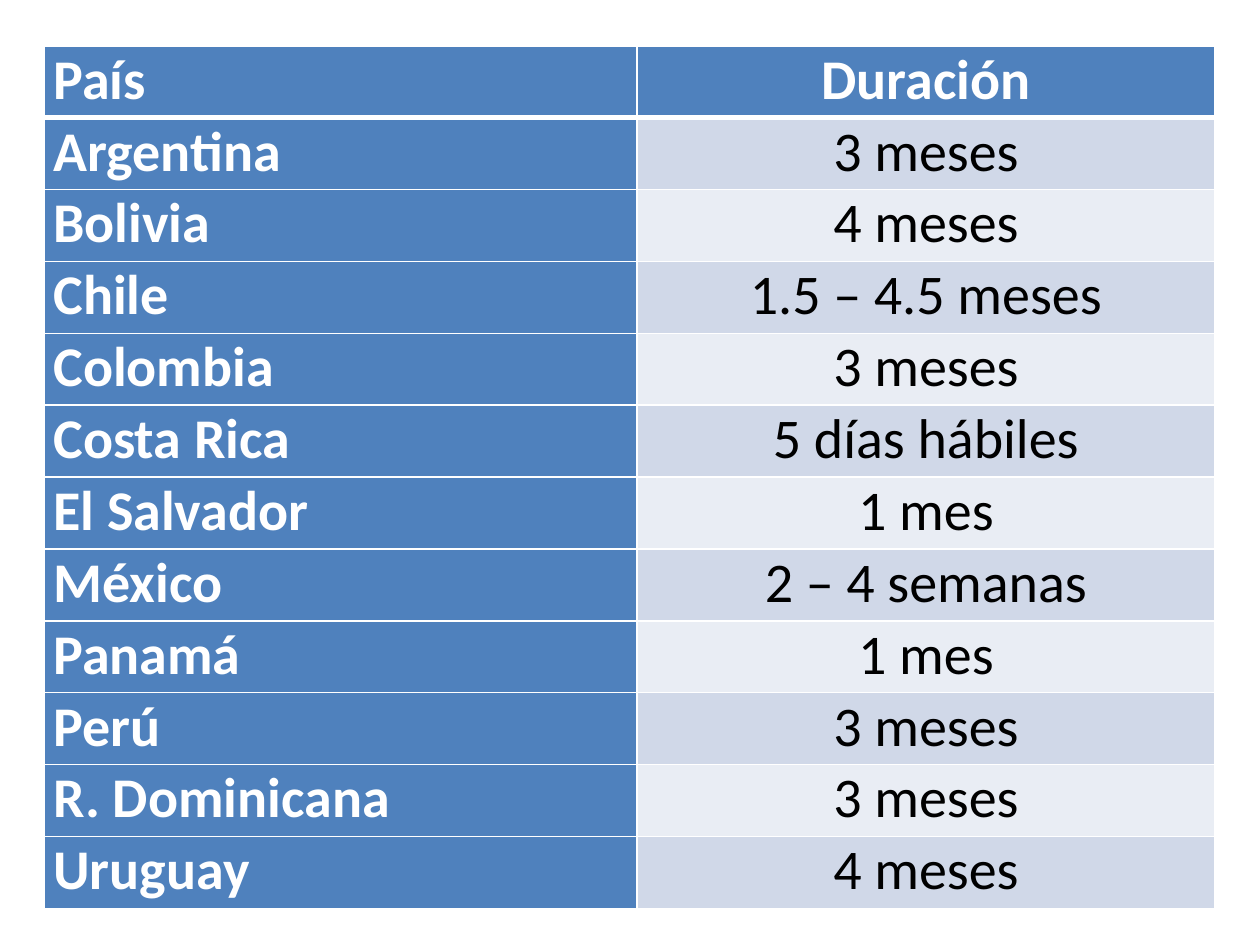
import pptx
import pptx.dml.color
import pptx.enum.text
import pptx.oxml
import pptx.oxml.ns
import pptx.util

Pt = pptx.util.Pt
ALIGN = pptx.enum.text.PP_ALIGN

DURATIONS = [
    ("País", "Duración"),
    ("Argentina", "3 meses"),
    ("Bolivia", "4 meses"),
    ("Chile", "1.5 – 4.5 meses"),
    ("Colombia", "3 meses"),
    ("Costa Rica", "5 días hábiles"),
    ("El Salvador", "1 mes"),
    ("México", "2 – 4 semanas"),
    ("Panamá", "1 mes"),
    ("Perú", "3 meses"),
    ("R. Dominicana", "3 meses"),
    ("Uruguay", "4 meses"),
]


def color(hex_value):
    return pptx.dml.color.RGBColor.from_string(hex_value)


class DurationSlide:
    """Holds the table style and the current slide."""

    font, size = "Calibri", 32
    white, black, blue = "FFFFFF", "000000", "4F81BD"
    bands = ("E9EDF4", "D0D8E8")

    def __init__(self, deck):
        self.slide = deck.slides.add_slide(deck.slide_layouts[6])

    def border(self, cell, widths):
        properties = cell._tc.get_or_add_tcPr()
        for position, (side, width) in enumerate(widths.items()):
            line = pptx.oxml.parse_xml(
                f'<a:ln{side} {pptx.oxml.ns.nsdecls("a")} w="{Pt(width)}">'
                f'<a:solidFill><a:srgbClr val="{self.white}"/></a:solidFill>'
                f'</a:ln{side}>'
            )
            properties.insert(position, line)

    def cell(self, cell, text, fill, ink, bold, align):
        cell.margin_left = cell.margin_right = Pt(5)
        cell.margin_top = cell.margin_bottom = 0
        cell.fill.solid()
        cell.fill.fore_color.rgb = color(fill)
        paragraph = cell.text_frame.paragraphs[0]
        paragraph.alignment = align
        run = paragraph.add_run()
        run.text = text
        run.font.name = self.font
        run.font.size = Pt(self.size)
        run.font.bold = bold
        run.font.color.rgb = color(ink)

    def table(self, rows, left, top, column_widths, row_height):
        table = self.slide.shapes.add_table(
            len(rows), len(column_widths), Pt(left), Pt(top),
            Pt(sum(column_widths)), Pt(row_height * len(rows)),
        ).table
        for column, width in zip(table.columns, column_widths):
            column.width = Pt(width)
        for index, texts in enumerate(rows):
            table.rows[index].height = Pt(row_height)
            widths = {"L": 1, "R": 1, "T": 3 if index == 1 else 1, "B": 3 if index == 0 else 1}
            for position, text in enumerate(texts):
                heading = index == 0 or position == 0
                cell = table.cell(index, position)
                self.cell(
                    cell, text,
                    fill=self.blue if heading else self.bands[index % 2],
                    ink=self.white if heading else self.black,
                    bold=heading,
                    align=ALIGN.CENTER if position else ALIGN.JUSTIFY,
                )
                self.border(cell, widths)


def main():
    deck = pptx.Presentation()
    deck.slide_width, deck.slide_height = Pt(720), Pt(540)
    DurationSlide(deck).table(DURATIONS, 25.5, 26.2, (338.4, 330.5), 41.1)
    deck.save("out.pptx")


if __name__ == "__main__":
    main()
